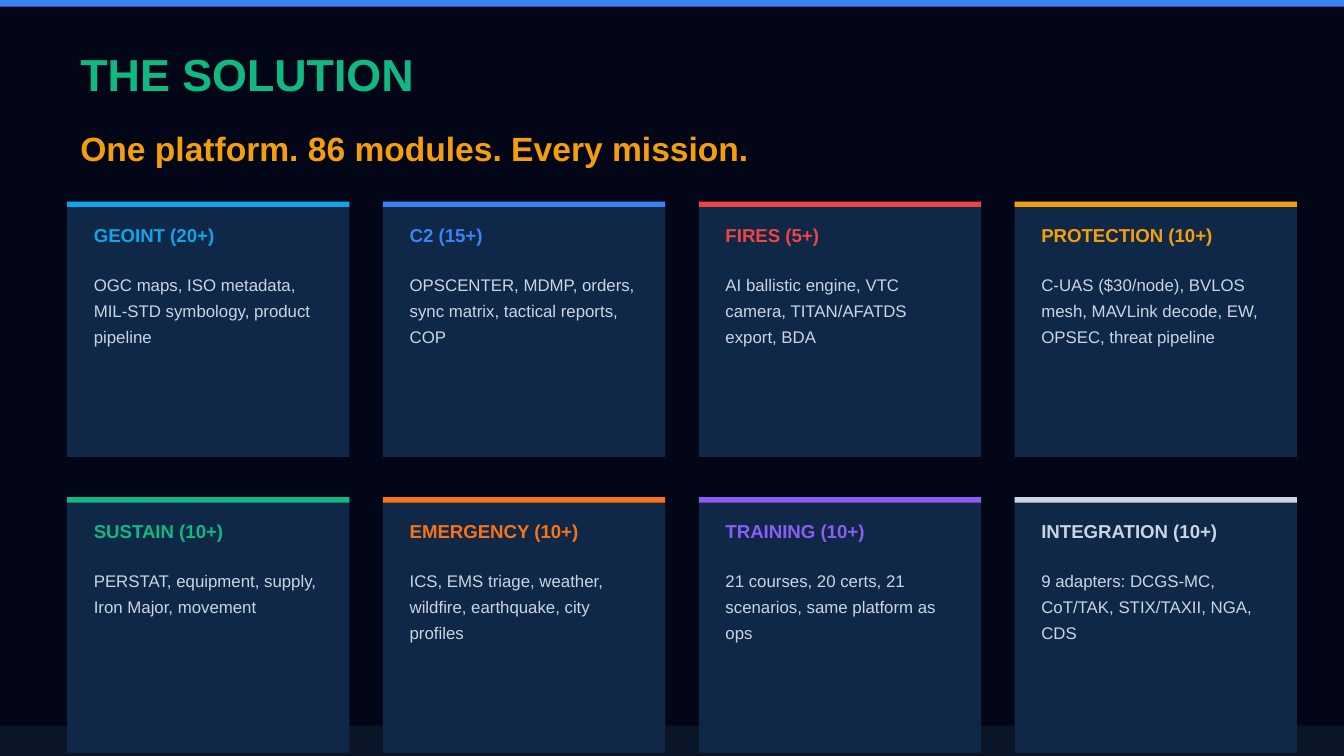
from pptx import Presentation
from pptx.dml.color import RGBColor
from pptx.enum.shapes import MSO_SHAPE
from pptx.enum.text import MSO_ANCHOR
from pptx.util import Inches, Pt

NAVY = RGBColor(0x02, 0x06, 0x17)
FOOTER = RGBColor(0x0A, 0x16, 0x28)
CARD = RGBColor(0x0F, 0x28, 0x47)
SKY = RGBColor(0x0E, 0xA5, 0xE9)
BLUE = RGBColor(0x3B, 0x82, 0xF6)
RED = RGBColor(0xEF, 0x44, 0x44)
AMBER = RGBColor(0xF5, 0x9E, 0x0B)
GREEN = RGBColor(0x10, 0xB9, 0x81)
ORANGE = RGBColor(0xF9, 0x73, 0x16)
VIOLET = RGBColor(0x8B, 0x5C, 0xF6)
SILVER = RGBColor(0xCB, 0xD5, 0xE1)

TITLE = "THE SOLUTION"
SUBTITLE = "One platform. 86 modules. Every mission."
MODULES = [
    ("GEOINT (20+)", SKY, "OGC maps, ISO metadata, MIL-STD symbology, product pipeline"),
    ("C2 (15+)", BLUE, "OPSCENTER, MDMP, orders, sync matrix, tactical reports, COP"),
    ("FIRES (5+)", RED, "AI ballistic engine, VTC camera, TITAN/AFATDS export, BDA"),
    ("PROTECTION (10+)", AMBER,
     "C-UAS ($30/node), BVLOS mesh, MAVLink decode, EW, OPSEC, threat pipeline"),
    ("SUSTAIN (10+)", GREEN, "PERSTAT, equipment, supply, Iron Major, movement"),
    ("EMERGENCY (10+)", ORANGE,
     "ICS, EMS triage, weather, wildfire, earthquake, city profiles"),
    ("TRAINING (10+)", VIOLET, "21 courses, 20 certs, 21 scenarios, same platform as ops"),
    ("INTEGRATION (10+)", SILVER, "9 adapters: DCGS-MC, CoT/TAK, STIX/TAXII, NGA, CDS"),
]

SLIDE_W = 10
SLIDE_H = SLIDE_W * 9 / 16
COLUMNS = 4
LEFT, TOP = 0.5, 1.5
CARD_W, CARD_H = 2.1, 1.9
GAP_X, GAP_Y = 0.25, 0.3
PAD = 0.1

prs = Presentation()
prs.slide_width, prs.slide_height = Inches(SLIDE_W), Inches(SLIDE_H)
slide = prs.slides.add_slide(prs.slide_layouts[6])
slide.background.fill.solid()
slide.background.fill.fore_color.rgb = NAVY


def add_bar(x, y, w, h, color):
    sp = slide.shapes.add_shape(MSO_SHAPE.RECTANGLE, Inches(x), Inches(y), Inches(w), Inches(h))
    sp.shadow.inherit = False
    sp.fill.solid()
    sp.fill.fore_color.rgb = color
    sp.line.fill.background()


def add_text(x, y, w, h, text, size, color, bold=True, anchor=MSO_ANCHOR.MIDDLE, spacing=None):
    tf = slide.shapes.add_textbox(Inches(x), Inches(y), Inches(w), Inches(h)).text_frame
    tf.word_wrap = True
    tf.vertical_anchor = anchor
    p = tf.paragraphs[0]
    p.line_spacing = spacing
    r = p.add_run()
    r.text = text
    r.font.name = "Arial"
    r.font.size = Pt(size)
    r.font.bold = bold
    r.font.color.rgb = color


add_bar(0, 0, SLIDE_W, 0.05, BLUE)
add_bar(0, 5.4, SLIDE_W, SLIDE_H - 5.4, FOOTER)
add_text(LEFT, 0.3, 5, 0.5, TITLE, 24, GREEN)
add_text(LEFT, 0.9, 9, 0.4, SUBTITLE, 18, AMBER)

for i, (name, color, details) in enumerate(MODULES):
    row, col = divmod(i, COLUMNS)
    x = LEFT + col * (CARD_W + GAP_X)
    y = TOP + row * (CARD_H + GAP_Y)
    text_w = CARD_W - 2 * PAD
    add_bar(x, y, CARD_W, CARD_H, CARD)
    add_bar(x, y, CARD_W, 0.04, color)
    add_text(x + PAD, y + PAD, text_w, 0.3, name, 10, color)
    add_text(x + PAD, y + 0.45, text_w, 1.3, details, 9, SILVER,
             bold=False, anchor=MSO_ANCHOR.TOP, spacing=1.3)

prs.save("out.pptx")
